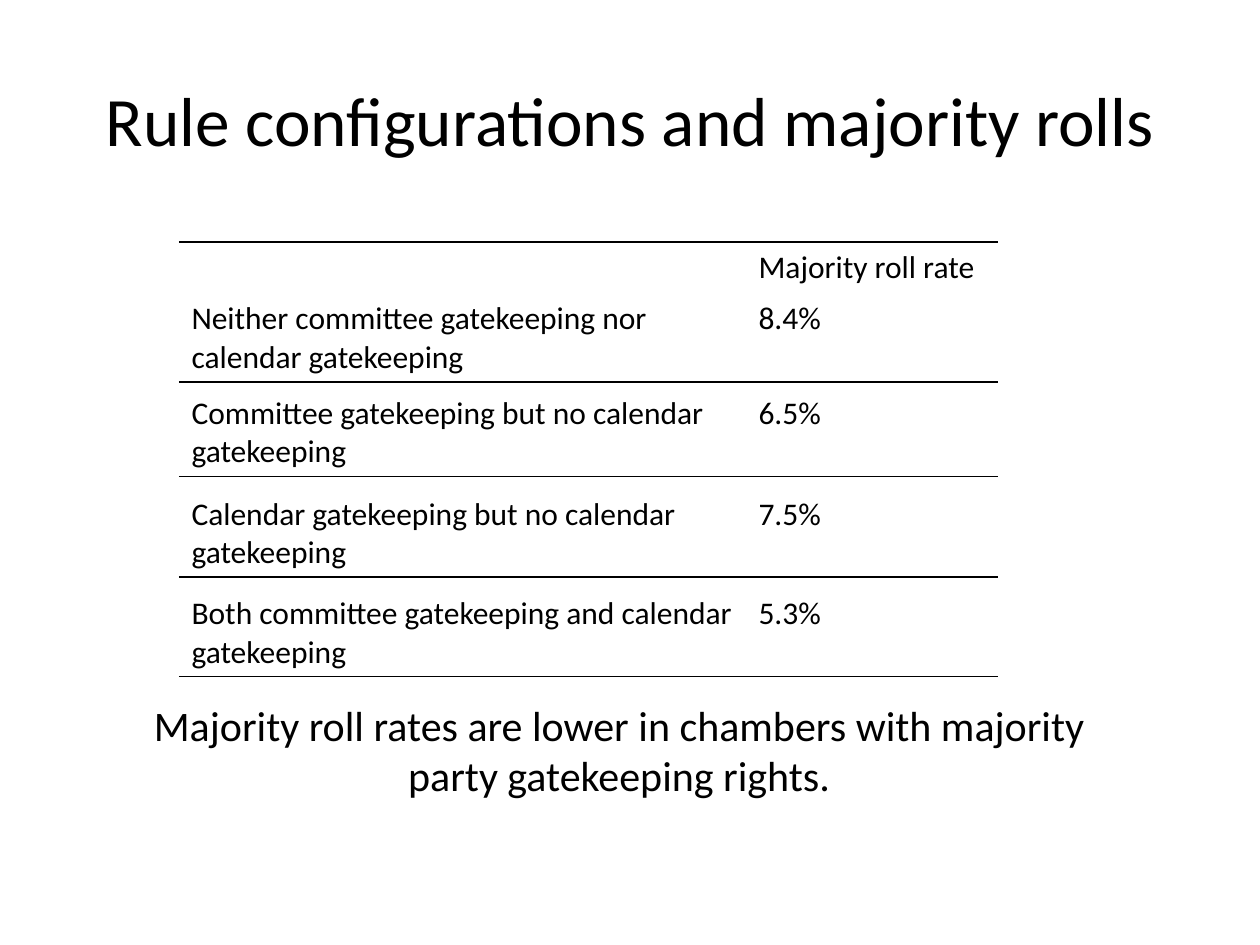
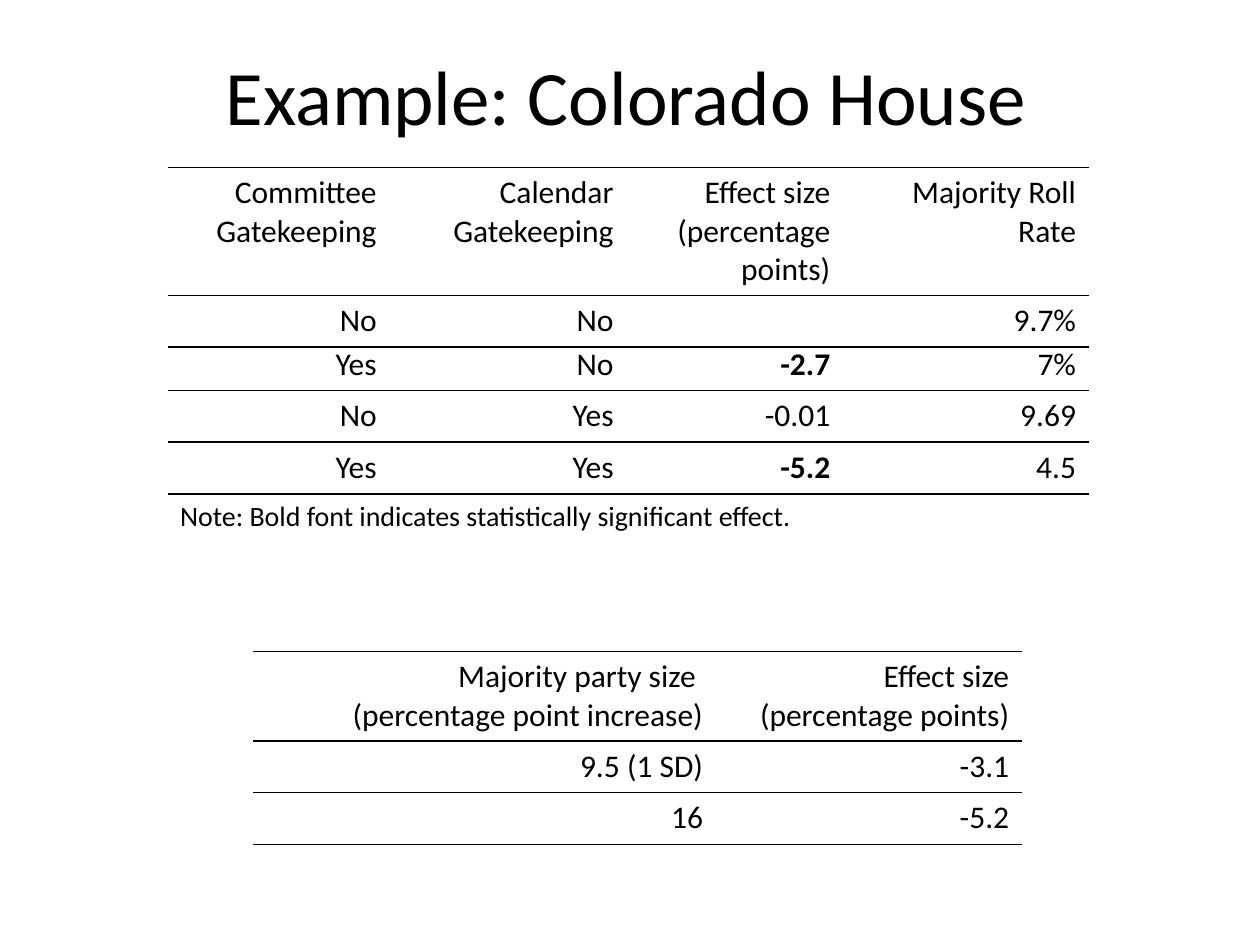
import pptx
import pptx.util
import pptx.dml.color
import pptx.enum.text
import lxml.etree

PX = 9144  # EMU in one px, 100 px to the inch
FONT = "Calibri"
HEX = {"ink": "000000", "rule": "000000"}
ALIGN = {"l": pptx.enum.text.PP_ALIGN.LEFT, "c": pptx.enum.text.PP_ALIGN.CENTER,
         "r": pptx.enum.text.PP_ALIGN.RIGHT}
NO_STYLE = "{2D5ABB26-0587-4C30-8999-92F81FD0307C}"

RATE_COLS = (450, 200)
HOUSE_COLS = (176, 188, 172, 195)

# A row is (height, ruled edges, cell texts).
SLIDES = [
    {"title": ("Rule configurations and majority rolls", 39.6, (0, 30, 1000, 128)),
     "tables": [
         {"at": (142, 192), "cols": RATE_COLS, "align": "l", "rows": [
             (41, "T", ("", "Majority roll rate")),
             (70, "B", ("Neither committee gatekeeping nor calendar gatekeeping", "8.4%"))]},
         {"at": (142, 308), "cols": RATE_COLS, "align": "l", "rows": [
             (70, "B", ("Committee gatekeeping but no calendar gatekeeping", "6.5%"))]},
         {"at": (142, 388), "cols": RATE_COLS, "align": "l", "rows": [
             (70, "B", ("Calendar gatekeeping but no calendar gatekeeping", "7.5%"))]},
         {"at": (142, 467), "cols": RATE_COLS, "align": "l", "rows": [
             (70, "B", ("Both committee gatekeeping and calendar gatekeeping", "5.3%"))]}],
     "claim": ("Majority roll rates are lower in chambers with majority "
               "party gatekeeping rights.", 24, (108, 550, 767, 91))},
    {"title": ("Example: Colorado House", 44, (47, 13, 900, 125)),
     "tables": [
         {"at": (133, 133), "cols": HOUSE_COLS, "align": "r", "rows": [
             (100, "TB", ("Committee Gatekeeping", "Calendar Gatekeeping",
                          "Effect size\n(percentage points)", "Majority Roll Rate")),
             (41, "TB", ("No", "No", "", "9.7%"))]},
         {"at": (201, 517), "cols": (367, 243), "align": "r", "rows": [
             (70, "TB", ("Majority party size \n(percentage point increase)",
                         "Effect size\n(percentage points)")),
             (41, "TB", ("9.5 (1 SD)", "-3.1")),
             (41, "TB", ("16", "-5.2"))]},
         {"at": (133, 269), "cols": HOUSE_COLS, "align": "r",
          "bold": {(0, 2), (2, 2)},
          "rows": [
              (41, "B", ("Yes", "No", "-2.7", "7%")),
              (41, "TB", ("No", "Yes", "-0.01", "9.69")),
              (41, "TB", ("Yes", "Yes", "-5.2", "4.5")),
              (41, "T", ("Note: Bold font indicates statistically significant effect.",))]}]},
]


def write(frame, text, size, align, bold=False):
    for i, line in enumerate(text.split("\n")):
        para = frame.paragraphs[0] if i == 0 else frame.add_paragraph()
        para.alignment = ALIGN[align]
        run = para.add_run()
        run.text = line
        run.font.name = FONT
        run.font.size = pptx.util.Pt(size)
        run.font.bold = bold
        run.font.color.rgb = pptx.dml.color.RGBColor.from_string(HEX["ink"])


def place(shape, box):
    shape.left, shape.top, shape.width, shape.height = (n * PX for n in box)


def rule(cell, edges):
    """Draw a 1 pt line on each named edge (T, B) of a cell."""
    props = cell._tc.get_or_add_tcPr()
    for i, edge in enumerate(edges):
        line = lxml.etree.Element(pptx.oxml.ns.qn("a:ln" + edge), w="12700")
        fill = lxml.etree.SubElement(line, pptx.oxml.ns.qn("a:solidFill"))
        lxml.etree.SubElement(fill, pptx.oxml.ns.qn("a:srgbClr"), val=HEX["rule"])
        props.insert(i, line)


def add_grid(slide, data):
    cols, rows = data["cols"], data["rows"]
    box = (*data["at"], sum(cols), sum(row[0] for row in rows))
    grid = slide.shapes.add_table(len(rows), len(cols), *(n * PX for n in box)).table
    grid.first_row = grid.horz_banding = False
    grid._tbl.tblPr.find(pptx.oxml.ns.qn("a:tableStyleId")).text = NO_STYLE
    for col, width in zip(grid.columns, cols):
        col.width = width * PX
    for r, (height, edges, texts) in enumerate(rows):
        grid.rows[r].height = height * PX
        for c in range(len(cols)):
            cell = grid.cell(r, c)
            cell.fill.background()
            rule(cell, edges)
        note = len(texts) < len(cols)
        if note:
            grid.cell(r, 0).merge(grid.cell(r, len(cols) - 1))
        for c, text in enumerate(texts):
            write(grid.cell(r, c).text_frame, text, 16 if note else 18,
                  "l" if note else data["align"], (r, c) in data.get("bold", ()))


def add_slide(deck, data):
    slide = deck.slides.add_slide(deck.slide_layouts.get_by_name("Title Only"))
    text, size, box = data["title"]
    place(slide.shapes.title, box)
    frame = slide.shapes.title.text_frame
    frame.vertical_anchor = pptx.enum.text.MSO_ANCHOR.MIDDLE
    write(frame, text, size, "c")
    if "claim" in data:
        text, size, box = data["claim"]
        frame = slide.shapes.add_textbox(*(n * PX for n in box)).text_frame
        frame.word_wrap = True
        frame.auto_size = pptx.enum.text.MSO_AUTO_SIZE.SHAPE_TO_FIT_TEXT
        write(frame, text, size, "c")
    for table in data["tables"]:
        add_grid(slide, table)


def main():
    deck = pptx.Presentation()
    deck.slide_width, deck.slide_height = 1000 * PX, 750 * PX
    for data in SLIDES:
        add_slide(deck, data)
    deck.save("out.pptx")


if __name__ == "__main__":
    main()
